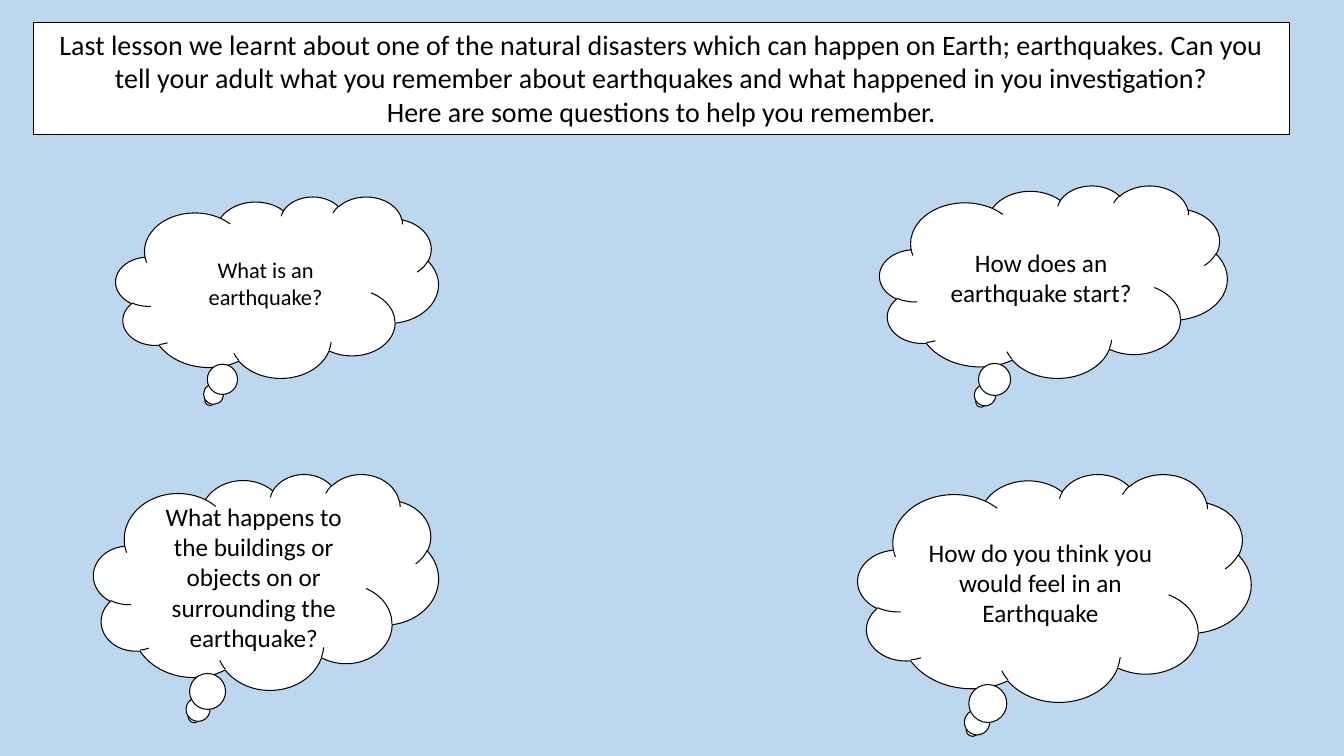
import pptx
import pptx.util
import pptx.dml.color
import pptx.enum.shapes
import pptx.enum.text

Cm = pptx.util.Cm
Pt = pptx.util.Pt
RGBColor = pptx.dml.color.RGBColor
MSO_ANCHOR = pptx.enum.text.MSO_ANCHOR

SKY = RGBColor(0xBD, 0xD7, 0xEE)
WHITE = RGBColor(0xFF, 0xFF, 0xFF)
BLACK = RGBColor(0x00, 0x00, 0x00)

INTRO = (
    "Last lesson we learnt about one of the natural disasters which can happen on Earth; "
    "earthquakes. Can you tell your adult what you remember about earthquakes and what "
    "happened in you investigation?\n"
    "Here are some questions to help you remember."
)

QUESTIONS = [
    ("How do you think you would feel in an Earthquake", 21.62, 11.94, 9.91, 5.74, 18),
    ("What happens to the buildings or objects on or surrounding the earthquake?",
     2.36, 11.94, 8.69, 5.44, 18),
    ("How does an earthquake start?", 22.17, 4.67, 8.76, 4.85, 18),
    ("What is an earthquake?", 2.92, 4.95, 8.13, 4.57, 16),
]


class QuestionSlide:
    font = "Calibri"

    def __init__(self, prs):
        self.s = prs.slides.add_slide(prs.slide_layouts[5])
        self.s.background.fill.solid()
        self.s.background.fill.fore_color.rgb = SKY

    def style(self, sp, text, size, line_width, anchor):
        sp.fill.solid()
        sp.fill.fore_color.rgb = WHITE
        sp.line.color.rgb = BLACK
        sp.line.width = Pt(line_width)
        tf = sp.text_frame
        tf.text = text
        tf.word_wrap = True
        tf.vertical_anchor = anchor
        for p in tf.paragraphs:
            p.alignment = pptx.enum.text.PP_ALIGN.CENTER
            for r in p.runs:
                r.font.name = self.font
                r.font.size = Pt(size)
                r.font.color.rgb = BLACK

    def title(self, text, left, top, width, height):
        sp = self.s.shapes.title
        sp.left, sp.top, sp.width, sp.height = Cm(left), Cm(top), Cm(width), Cm(height)
        self.style(sp, text, 20, 0.5, MSO_ANCHOR.TOP)
        sp.text_frame.auto_size = pptx.enum.text.MSO_AUTO_SIZE.SHAPE_TO_FIT_TEXT

    def thought(self, text, left, top, width, height, size):
        sp = self.s.shapes.add_shape(
            pptx.enum.shapes.MSO_SHAPE.CLOUD_CALLOUT,
            Cm(left), Cm(top), Cm(width), Cm(height))
        sp.shadow.inherit = False
        self.style(sp, text, size, 0.75, MSO_ANCHOR.MIDDLE)


def main():
    prs = pptx.Presentation()
    prs.slide_width, prs.slide_height = Cm(33.87), Cm(19.05)
    slide = QuestionSlide(prs)
    slide.title(INTRO, 0.84, 0.56, 31.65, 2.82)
    for question in QUESTIONS:
        slide.thought(*question)
    prs.save("out.pptx")


if __name__ == "__main__":
    main()
